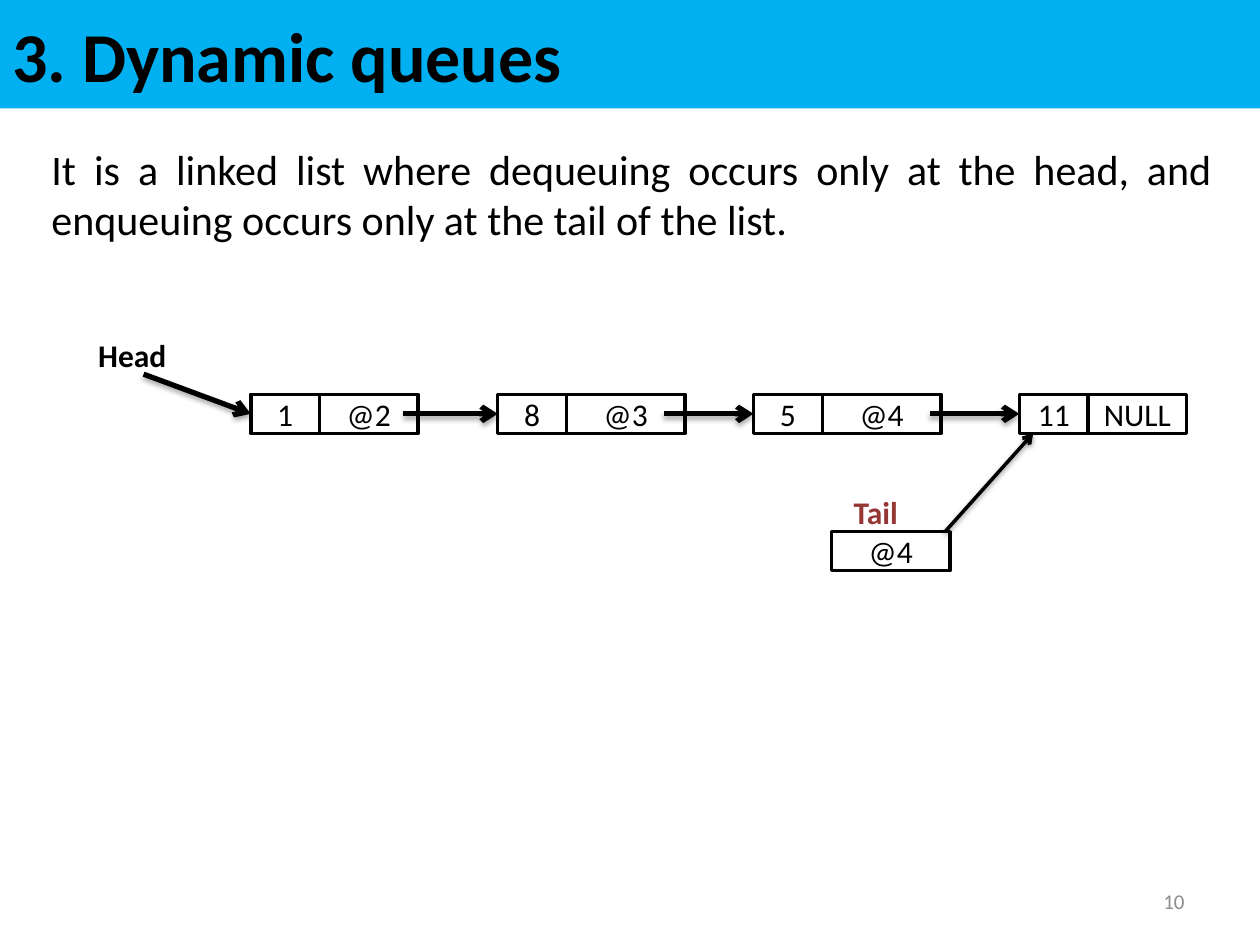
from dataclasses import dataclass

from lxml import etree
from pptx import Presentation, util as u
from pptx.dml.color import RGBColor
from pptx.enum import shapes as sh, text as tx
from pptx.oxml.ns import qn

BLACK = RGBColor(0x00, 0x00, 0x00)
WHITE = RGBColor(0xFF, 0xFF, 0xFF)
BLUE = RGBColor(0x00, 0xB0, 0xF0)
RED = RGBColor(0x95, 0x37, 0x35)
GREY = RGBColor(0x8C, 0x8C, 0x8C)

WIDE, HIGH = u.Inches(10), u.Inches(7.5)
# Places and sizes below are percent of the slide's width and height.
ROW, TALL, KEY = 41.73, 4.13, 5.47
MID = ROW + TALL / 2


@dataclass
class Area:
    x: float
    y: float
    w: float
    h: float

    def emu(self) -> tuple:
        return across(self.x), down(self.y), across(self.w), down(self.h)


@dataclass
class Node:
    x: float
    key: str
    link: str
    w: float
    tip: float | None = None  # where the arrow to the next node starts


NODES = [
    Node(19.9, "1", "@2", 7.8, 32),
    Node(39.5, "8", "@3", 9.4, 52.7),
    Node(59.8, "5", "@4", 9.4, 73.8),
    Node(80.9, "11", "NULL", 7.8),
]


def across(share: float) -> int:
    return int(WIDE * share / 100)


def down(share: float) -> int:
    return int(HIGH * share / 100)


def write(shape, words: str, size: int = 18, color: RGBColor = BLACK,
          bold: bool = False, align=tx.PP_ALIGN.CENTER,
          anchor=tx.MSO_ANCHOR.MIDDLE):
    frame = shape.text_frame
    frame.word_wrap = True
    frame.vertical_anchor = anchor
    para = frame.paragraphs[0]
    para.text = words
    para.alignment = align
    font = para.font
    font.name, font.size, font.bold = "Calibri", u.Pt(size), bold
    font.color.rgb = color
    return shape


def block(slide, area: Area, fill: RGBColor, line: float = 0):
    shape = slide.shapes.add_shape(sh.MSO_SHAPE.RECTANGLE, *area.emu())
    shape.shadow.inherit = False
    shape.fill.solid()
    shape.fill.fore_color.rgb = fill
    if line:
        shape.line.color.rgb = BLACK
        shape.line.width = u.Pt(line)
    else:
        shape.line.fill.background()
    return shape


def label(slide, area: Area, words: str, **style):
    return write(slide.shapes.add_textbox(*area.emu()), words, **style)


def cell(slide, x: float, y: float, w: float, words: str):
    return write(block(slide, Area(x, y, w, TALL), WHITE, 2), words)


def arrow(slide, x: float, y: float, end: tuple, width: float = 3,
          goal=None, alpha: int = 35, drop: float = 1.8) -> None:
    """Draw a shadowed arrow, joined to the left side of goal if given."""
    line = slide.shapes.add_connector(
        sh.MSO_CONNECTOR.STRAIGHT, across(x), down(y),
        across(end[0]), down(end[1]))
    if goal is not None:
        line.end_connect(goal, 1)
    line.line.color.rgb = BLACK
    line.line.width = u.Pt(width)
    props = line._element.spPr
    etree.SubElement(props.find(qn("a:ln")), qn("a:tailEnd"), type="arrow")
    shade = etree.SubElement(
        etree.SubElement(props, qn("a:effectLst")), qn("a:outerShdw"),
        blurRad=str(u.Pt(3.1)), dist=str(u.Pt(drop)), dir="5400000",
        rotWithShape="0")
    tint = etree.SubElement(shade, qn("a:srgbClr"), val=str(BLACK))
    etree.SubElement(tint, qn("a:alpha"), val=str(alpha * 1000))


def chain(slide) -> None:
    """Draw the linked nodes and the arrows between them."""
    keys = []
    for node in NODES:
        keys.append(cell(slide, node.x, ROW, KEY, node.key))
        cell(slide, node.x + KEY, ROW, node.w, node.link)
    arrow(slide, 11.4, 39.6, (NODES[0].x, MID), goal=keys[0])
    for node, after, goal in zip(NODES, NODES[1:], keys[1:]):
        arrow(slide, node.tip, MID, (after.x, MID), goal=goal)


def main() -> None:
    deck = Presentation()
    deck.slide_width, deck.slide_height = WIDE, HIGH
    slide = deck.slides.add_slide(deck.slide_layouts[6])

    write(block(slide, Area(0, 0, 100, 11.47), BLUE), "3. Dynamic queues",
          size=40, bold=True, align=tx.PP_ALIGN.LEFT)
    label(slide, Area(3.1, 14.53, 94.1, 79.2),
          "It is a linked list where dequeuing occurs only at the head, "
          "and enqueuing occurs only at the tail of the list.",
          size=24, align=tx.PP_ALIGN.JUSTIFY, anchor=tx.MSO_ANCHOR.TOP)
    label(slide, Area(71.7, 92.67, 23.3, 5.33), "10",
          size=12, color=GREY, align=tx.PP_ALIGN.RIGHT)

    write(block(slide, Area(6.6, 35.47, 7.8, TALL), WHITE), "Head", bold=True)
    chain(slide)

    label(slide, Area(62.1, 52.13, 14.8, TALL), "Tail", color=RED, bold=True)
    cell(slide, 66, 56.27, 9.4, "@4")
    arrow(slide, 75, 56.27, (82, ROW + TALL), width=2, alpha=38, drop=1.6)

    deck.save("out.pptx")


if __name__ == "__main__":
    main()
